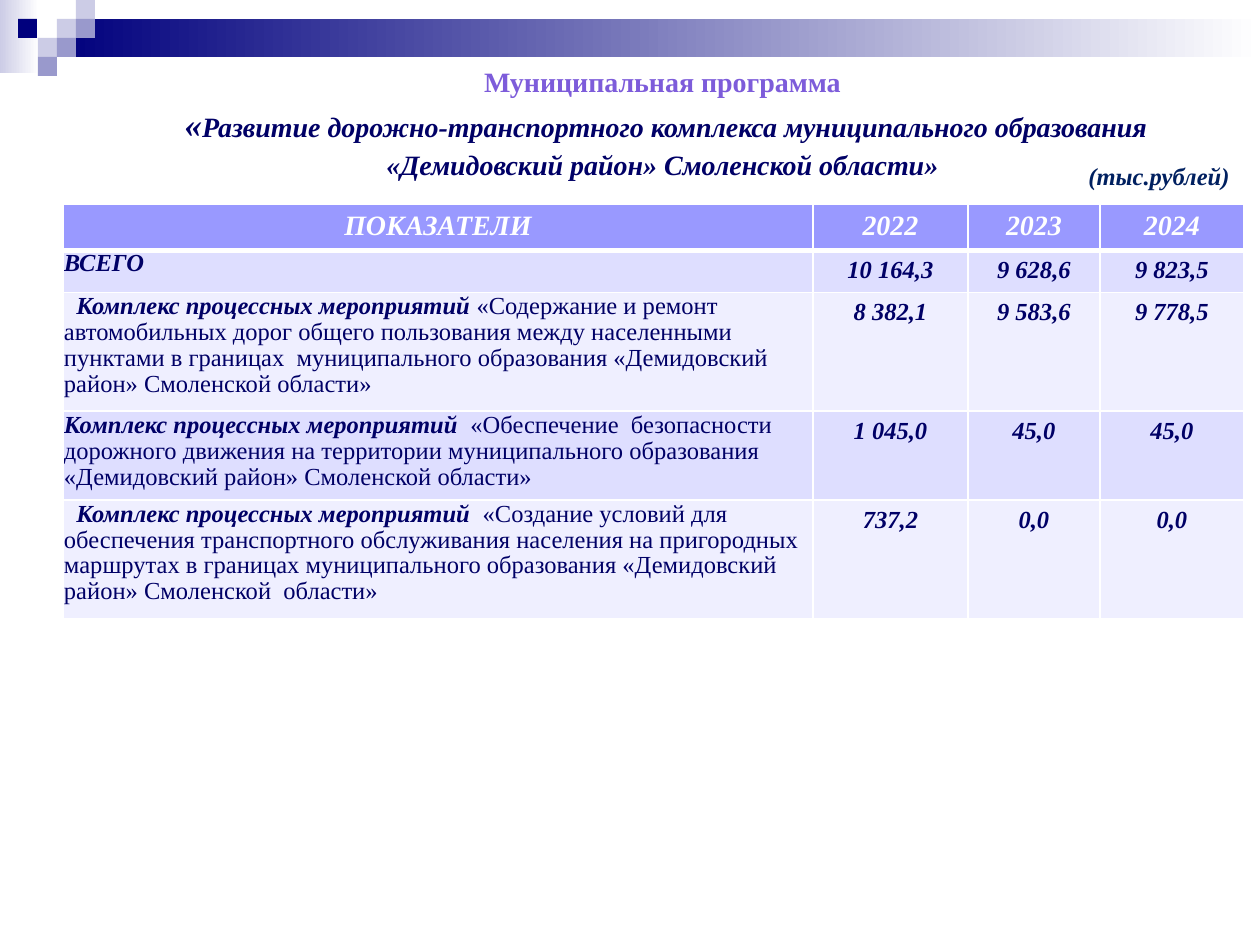
from lxml.etree import SubElement
from pptx import Presentation
from pptx.dml.color import RGBColor
from pptx.enum.shapes import MSO_SHAPE
from pptx.enum.text import MSO_ANCHOR, PP_ALIGN
from pptx.oxml.ns import qn
from pptx.util import Emu, Pt

SCALE = 914400 / 126
FONT = "Times New Roman"
WHITE = RGBColor(0xFF, 0xFF, 0xFF)
NAVY = RGBColor(0x00, 0x00, 0x7D)
LAVENDER = RGBColor(0xCC, 0xCC, 0xE6)
LILAC = RGBColor(0x99, 0x99, 0xCC)
VIOLET = RGBColor(0x7D, 0x5C, 0xDA)
INK = RGBColor(0x00, 0x00, 0x66)
UNIT_BLUE = RGBColor(0x00, 0x20, 0x60)
HEADER_FILL = RGBColor(0x99, 0x99, 0xFF)
BAND_FILLS = (RGBColor(0xDE, 0xDE, 0xFF), RGBColor(0xEF, 0xEF, 0xFF))

SQUARE = 19
SQUARES = [
    (57, 19, LAVENDER), (76, 0, LAVENDER), (76, 19, LILAC), (38, 38, LAVENDER),
    (18, 19, NAVY), (57, 38, LILAC), (38, 57, LILAC),
]
COLUMN_WIDTHS = (750, 155, 132, 144)
ROW_HEIGHTS = (45, 42, 119, 89, 119)
HEADINGS = ("ПОКАЗАТЕЛИ", "2022", "2023", "2024")
PROCESS = "Комплекс процессных мероприятий "
INDICATORS = [
    ([("ВСЕГО", True)], ("10 164,3", "9 628,6", "9 823,5")),
    ([("  ", False), (PROCESS, True),
      ("«Содержание и ремонт автомобильных дорог общего пользования между "
       "населенными пунктами в границах  муниципального образования "
       "«Демидовский район» Смоленской области»", False)],
     ("8 382,1", "9 583,6", "9 778,5")),
    ([(PROCESS + " ", True),
      ("«Обеспечение  безопасности дорожного движения на территории "
       "муниципального образования «Демидовский район» Смоленской области»", False)],
     ("1 045,0", "45,0", "45,0")),
    ([("  ", False), (PROCESS + " ", True),
      ("«Создание условий для обеспечения транспортного обслуживания населения "
       "на пригородных маршрутах в границах муниципального образования "
       "«Демидовский район» Смоленской  области»", False)],
     ("737,2", "0,0", "0,0")),
]


def px(length):
    return Emu(round(length * SCALE))


def add_block(slide, left, top, width, height, color, fade=False):
    block = slide.shapes.add_shape(
        MSO_SHAPE.RECTANGLE, px(left), px(top), px(width), px(height))
    block.shadow.inherit = False
    block.line.fill.background()
    if fade:
        block.fill.gradient()
        block.fill.gradient_angle = 0
        for stop, position, tint in zip(block.fill.gradient_stops, (0, 1), (color, WHITE)):
            stop.position = position
            stop.color.rgb = tint
    else:
        block.fill.solid()
        block.fill.fore_color.rgb = color


def add_run(paragraph, text, size, color, bold=True, italic=True):
    run = paragraph.add_run()
    run.text = text
    run.font.name = FONT
    run.font.size = Pt(size)
    run.font.color.rgb = color
    run.font.bold = bold
    run.font.italic = italic


def add_text_frame(slide, left, top, width, height, wrap):
    frame = slide.shapes.add_textbox(px(left), px(top), px(width), px(height)).text_frame
    frame.word_wrap = wrap
    return frame


def add_title(slide):
    frame = add_text_frame(slide, 125, 55, 1082, 124, True)
    kind, name = frame.paragraphs[0], frame.add_paragraph()
    for paragraph in (kind, name):
        paragraph.alignment = PP_ALIGN.CENTER
        paragraph.line_spacing = 1.1
    add_run(kind, "Муниципальная программа ", 16, VIOLET, italic=False)
    add_run(name, "«", 20, INK)
    add_run(name, "Развитие дорожно-транспортного комплекса муниципального образования "
                  "«Демидовский район» Смоленской области» ", 16, INK)


def set_borders(cell, bottom=1, top=1):
    properties = cell._tc.get_or_add_tcPr()
    for position, (side, width) in enumerate(
            (("L", 1), ("R", 1), ("T", top), ("B", bottom))):
        line = SubElement(properties, qn(f"a:ln{side}"), w=str(Pt(width)))
        fill = SubElement(line, qn("a:solidFill"))
        SubElement(fill, qn("a:srgbClr"), val=str(WHITE))
        properties.insert(position, line)


def fill_cell(cell, runs, size, text_color, fill_color, centered=True):
    cell.fill.solid()
    cell.fill.fore_color.rgb = fill_color
    cell.vertical_anchor = MSO_ANCHOR.TOP
    paragraph = cell.text_frame.paragraphs[0]
    if centered:
        paragraph.alignment = PP_ALIGN.CENTER
    else:
        cell.margin_left = cell.margin_top = cell.margin_right = px(1)
        cell.margin_bottom = 0
        paragraph.line_spacing = 0.96
    for text, strong in runs:
        add_run(paragraph, text, size, text_color, strong, strong)


def add_indicator_table(slide):
    table = slide.shapes.add_table(
        len(ROW_HEIGHTS), len(COLUMN_WIDTHS), px(63), px(204),
        px(sum(COLUMN_WIDTHS)), px(sum(ROW_HEIGHTS))).table
    for column, width in zip(table.columns, COLUMN_WIDTHS):
        column.width = px(width)
    for row, height in zip(table.rows, ROW_HEIGHTS):
        row.height = px(height)
    for cell, heading in zip(table.rows[0].cells, HEADINGS):
        fill_cell(cell, [(heading, True)], 16, WHITE, HEADER_FILL)
        set_borders(cell, bottom=3)
    for index, (label, amounts) in enumerate(INDICATORS):
        contents = [label] + [[(amount, True)] for amount in amounts]
        for column, runs in enumerate(contents):
            cell = table.cell(index + 1, column)
            fill_cell(cell, runs, 14, INK, BAND_FILLS[index % 2], column > 0)
            set_borders(cell, top=3 if index == 0 else 1)


def add_unit_note(slide):
    frame = add_text_frame(slide, 1076, 155, 168, 43, False)
    add_run(frame.paragraphs[0], "(тыс.рублей)", 14, UNIT_BLUE)


def main():
    presentation = Presentation()
    presentation.slide_width, presentation.slide_height = px(1260), px(945)
    slide = presentation.slides.add_slide(presentation.slide_layouts[6])
    add_block(slide, 0, 0, 39, 73, LAVENDER, fade=True)
    add_block(slide, 57, 19, 1203, 38, NAVY, fade=True)
    for left, top, color in SQUARES:
        add_block(slide, left, top, SQUARE, SQUARE, color)
    add_title(slide)
    add_indicator_table(slide)
    add_unit_note(slide)
    presentation.save("out.pptx")


if __name__ == "__main__":
    main()
